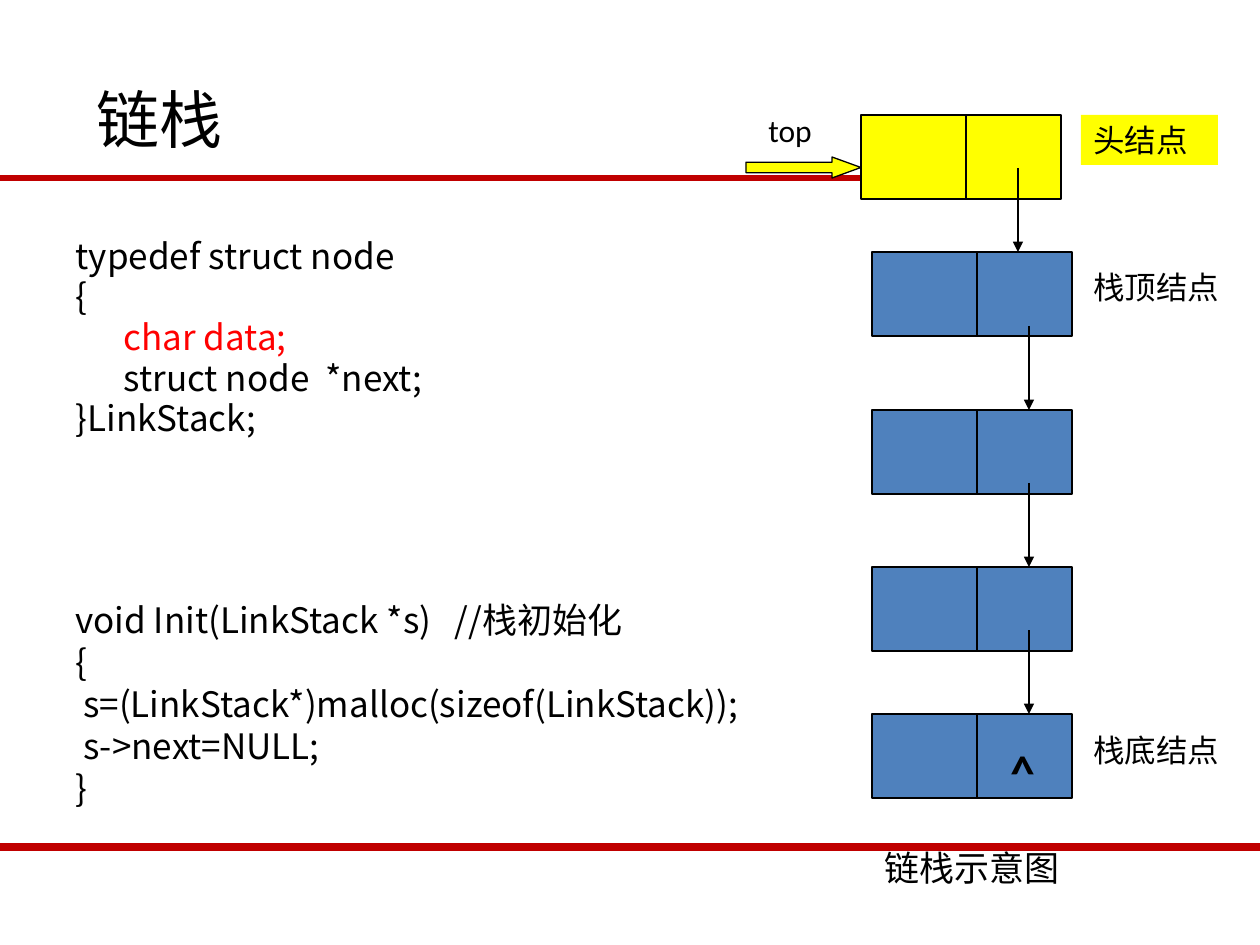
from lxml import etree
from pptx import Presentation
from pptx import util as u
from pptx.dml.color import RGBColor
from pptx.enum import shapes, text
from pptx.oxml.ns import qn

PX = 914400 / 126  # EMU in one px
CJK, LATIN = "Noto Sans CJK SC", "Calibri"
COLORS = {"ink": "000000", "rule": "C00000", "node": "4F81BD",
          "head": "FFFF00", "key": "FF0000"}


def color(name):
    return RGBColor.from_string(COLORS[name])


def emu(*lengths):
    return [u.Emu(round(length * PX)) for length in lengths]


class StackSlide:
    def __init__(self, prs):
        self.slide = prs.slides.add_slide(prs.slide_layouts[1])
        self.shapes = self.slide.shapes

    def style(self, paragraph, size, font=CJK, bold=False):
        paragraph.font.size = u.Pt(size)
        paragraph.font.name = font
        paragraph.font.bold = bold
        paragraph.font.color.rgb = color("ink")
        paragraph.alignment = text.PP_ALIGN.LEFT

    def place(self, holder, box):
        holder.left, holder.top, holder.width, holder.height = emu(*box)
        holder.text_frame.auto_size = text.MSO_AUTO_SIZE.NONE
        return holder.text_frame

    def title(self, words, box):
        frame = self.place(self.shapes.title, box)
        frame.vertical_anchor = text.MSO_ANCHOR.MIDDLE
        frame.text = words
        self.style(frame.paragraphs[0], 36)

    def body(self, lines, box, indent, highlight):
        frame = self.place(self.slide.placeholders[1], box)
        frame.text = "\n".join(lines)
        for number, paragraph in enumerate(frame.paragraphs):
            props = paragraph._p.get_or_add_pPr()
            props.set("marL", str(emu(indent)[0]))
            props.set("indent", str(-emu(indent)[0]))
            etree.SubElement(props, qn("a:buNone"))
            self.style(paragraph, 20)
            paragraph.line_spacing = 0.8
            paragraph.space_before = u.Pt(4 if number else 0)
            if highlight in paragraph.text:
                paragraph.runs[0].font.color.rgb = color("key")

    def label(self, words, box, size=18, font=CJK, bold=False, fill=None):
        area = self.shapes.add_textbox(*emu(*box))
        if fill:
            area.fill.solid()
            area.fill.fore_color.rgb = color(fill)
        area.text_frame.word_wrap = True
        area.text_frame.text = words
        for paragraph in area.text_frame.paragraphs:
            self.style(paragraph, size, font, bold)

    def block(self, kind, box, fill):
        block = self.shapes.add_shape(kind, *emu(*box))
        block.shadow.inherit = False
        block.fill.solid()
        block.fill.fore_color.rgb = color(fill)
        block.line.color.rgb = color("ink")
        block.line.width = u.Pt(0.75)
        return block

    def line(self, start, end, ink="ink", width=0.75, arrow=False):
        line = self.shapes.add_connector(
            shapes.MSO_CONNECTOR.STRAIGHT, *emu(*start, *end))
        line.line.color.rgb = color(ink)
        line.line.width = u.Pt(width)
        if arrow:
            tail = etree.SubElement(line.line._get_or_add_ln(), qn("a:tailEnd"))
            tail.set("type", "triangle")
        etree.SubElement(line._element.spPr, qn("a:effectLst"))

    def node(self, left, top, fill):
        self.block(shapes.MSO_SHAPE.RECTANGLE, (left, top, 200, 84), fill)
        self.line((left + 105, top), (left + 105, top + 84))


def main():
    prs = Presentation()
    prs.slide_width, prs.slide_height = emu(1260, 945)
    page = StackSlide(prs)

    # Rules above and below the content
    page.line((0, 178), (1033, 178), "rule", 3)
    page.line((0, 847), (1260, 847), "rule", 4.5)

    # Title and code
    page.title("链栈", (84, 69, 945, 98))
    page.body(["typedef struct node", "{", "\tchar data;",
               "\tstruct node  *next;", "}LinkStack;"],
              (63, 236, 630, 336), 48, "char data;")
    page.label("\n".join(["void Init(LinkStack *s)   //栈初始化", "{",
                          " s=(LinkStack*)malloc(sizeof(LinkStack));",
                          " s->next=NULL;", "}"]),
               (63, 592, 788, 224), 20)

    # Head node and its pointer
    page.node(861, 115, "head")
    pointer = page.block(shapes.MSO_SHAPE.RIGHT_ARROW,
                         (746, 157, 115, 21), "head")
    pointer.adjustments[0], pointer.adjustments[1] = 0.5, 1.375
    page.label("top", (756, 105, 74, 50), font=LATIN)

    # Chain of nodes, then the links that end on them
    node_tops = [252, 410, 567, 714]
    for top in node_tops:
        page.node(872, top, "node")
    for top in node_tops:
        link_x = 1018 if top == node_tops[0] else 1029
        page.line((link_x, top - 84), (link_x, top), arrow=True)
    page.label("^", (998, 735, 42, 72), 28, LATIN, bold=True)

    # Names of the nodes and of the diagram
    page.label("头结点", (1081, 115, 137, 50), fill="head")
    for name, top in [("栈顶结点", 262), ("栈底结点", 725)]:
        page.label(name, (1081, top, 158, 50))
    page.label("链栈示意图", (872, 840, 242, 54), 20, LATIN)

    prs.save("out.pptx")


if __name__ == "__main__":
    main()
